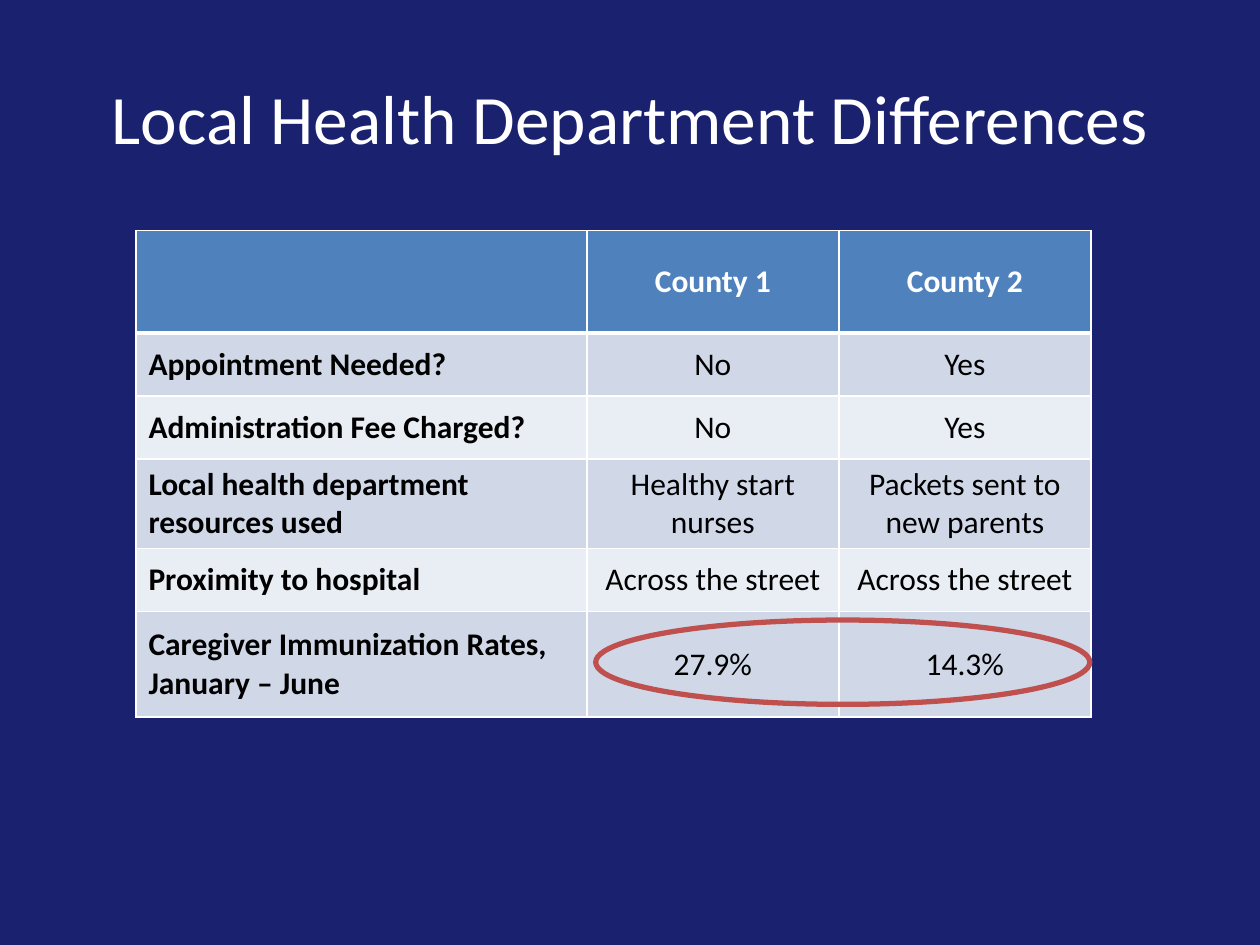
from dataclasses import dataclass

from lxml.etree import SubElement
from pptx import Presentation
from pptx.dml.color import RGBColor
from pptx.enum.shapes import MSO_SHAPE
from pptx.enum.text import MSO_ANCHOR, PP_ALIGN
from pptx.oxml.ns import qn
from pptx.util import Cm, Pt


@dataclass(frozen=True)
class Theme:
    font: str = "Calibri"
    background: str = "1A2270"
    light: str = "FFFFFF"
    dark: str = "000000"
    header: str = "4F81BD"
    bands: tuple = ("D0D8E8", "E9EDF4")
    highlight: str = "C0504D"
    title_size: float = 39.6
    table_size: float = 18
    thin: float = 1
    thick: float = 3


@dataclass(frozen=True)
class Box:
    left: float
    top: float
    width: float
    height: float

    def lengths(self):
        return [Cm(value) for value in (self.left, self.top, self.width, self.height)]


THEME = Theme()
TITLE = "Local Health Department Differences"
COMPARISON = [
    ("", "County 1", "County 2"),
    ("Appointment Needed?", "No", "Yes"),
    ("Administration Fee Charged?", "No", "Yes"),
    ("Local health department resources used", "Healthy start nurses", "Packets sent to new parents"),
    ("Proximity to hospital", "Across the street", "Across the street"),
    ("Caregiver Immunization Rates, January – June", "27.9%", "14.3%"),
]
COLUMN_WIDTHS = [9.09, 5.08, 5.08]
ROW_HEIGHTS = [2.06, 1.27, 1.27, 1.78, 1.27, 2.13]


def rgb(colour):
    return RGBColor.from_string(colour)


def style_text(frame, size, colour, align, bold=False):
    frame.vertical_anchor = MSO_ANCHOR.MIDDLE
    for paragraph in frame.paragraphs:
        paragraph.alignment = align
        for run in paragraph.runs:
            run.font.name = THEME.font
            run.font.size = Pt(size)
            run.font.bold = bold
            run.font.color.rgb = rgb(colour)


def add_borders(cell, row):
    properties = cell._tc.get_or_add_tcPr()
    thick_side = {0: "lnB", 1: "lnT"}.get(row)
    for side in ("lnL", "lnR", "lnT", "lnB"):
        width = THEME.thick if side == thick_side else THEME.thin
        line = SubElement(properties, qn(f"a:{side}"), w=str(Pt(width)))
        SubElement(SubElement(line, qn("a:solidFill")), qn("a:srgbClr"), val=THEME.light)


def place_title(slide, box):
    title = slide.shapes.title
    title.left, title.top, title.width, title.height = box.lengths()
    title.text_frame.text = TITLE
    style_text(title.text_frame, THEME.title_size, THEME.light, PP_ALIGN.CENTER)


def place_comparison(slide, box):
    frame = slide.shapes.add_table(len(ROW_HEIGHTS), len(COLUMN_WIDTHS), *box.lengths())
    table = frame.table
    for column, width in zip(table.columns, COLUMN_WIDTHS):
        column.width = Cm(width)
    for table_row, height in zip(table.rows, ROW_HEIGHTS):
        table_row.height = Cm(height)
    for row, entries in enumerate(COMPARISON):
        is_header = row == 0
        fill = THEME.header if is_header else THEME.bands[(row - 1) % 2]
        for column, entry in enumerate(entries):
            cell = table.cell(row, column)
            add_borders(cell, row)
            cell.fill.solid()
            cell.fill.fore_color.rgb = rgb(fill)
            cell.vertical_anchor = MSO_ANCHOR.MIDDLE
            cell.text_frame.text = entry
            style_text(
                cell.text_frame,
                THEME.table_size,
                THEME.light if is_header else THEME.dark,
                PP_ALIGN.LEFT if column == 0 else PP_ALIGN.CENTER,
                bold=is_header or column == 0,
            )


def place_rate_highlight(slide, box):
    ellipse = slide.shapes.add_shape(MSO_SHAPE.OVAL, *box.lengths())
    ellipse.shadow.inherit = False
    ellipse.fill.background()
    ellipse.line.color.rgb = rgb(THEME.highlight)
    ellipse.line.width = Pt(THEME.thick)


def main():
    deck = Presentation()
    deck.slide_width, deck.slide_height = Cm(25.4), Cm(19.05)
    slide = deck.slides.add_slide(deck.slide_layouts[5])
    slide.background.fill.solid()
    slide.background.fill.fore_color.rgb = rgb(THEME.background)

    comparison = Box(2.74, 4.65, sum(COLUMN_WIDTHS), sum(ROW_HEIGHTS))
    rates = Box(
        comparison.left + COLUMN_WIDTHS[0] + 0.18,
        comparison.top + sum(ROW_HEIGHTS[:-1]) + 0.2,
        sum(COLUMN_WIDTHS[1:]) - 0.2,
        ROW_HEIGHTS[-1] - 0.43,
    )
    place_title(slide, Box(1.27, 0.76, 22.86, 3.18))
    place_comparison(slide, comparison)
    place_rate_highlight(slide, rates)
    deck.save("out.pptx")


if __name__ == "__main__":
    main()
